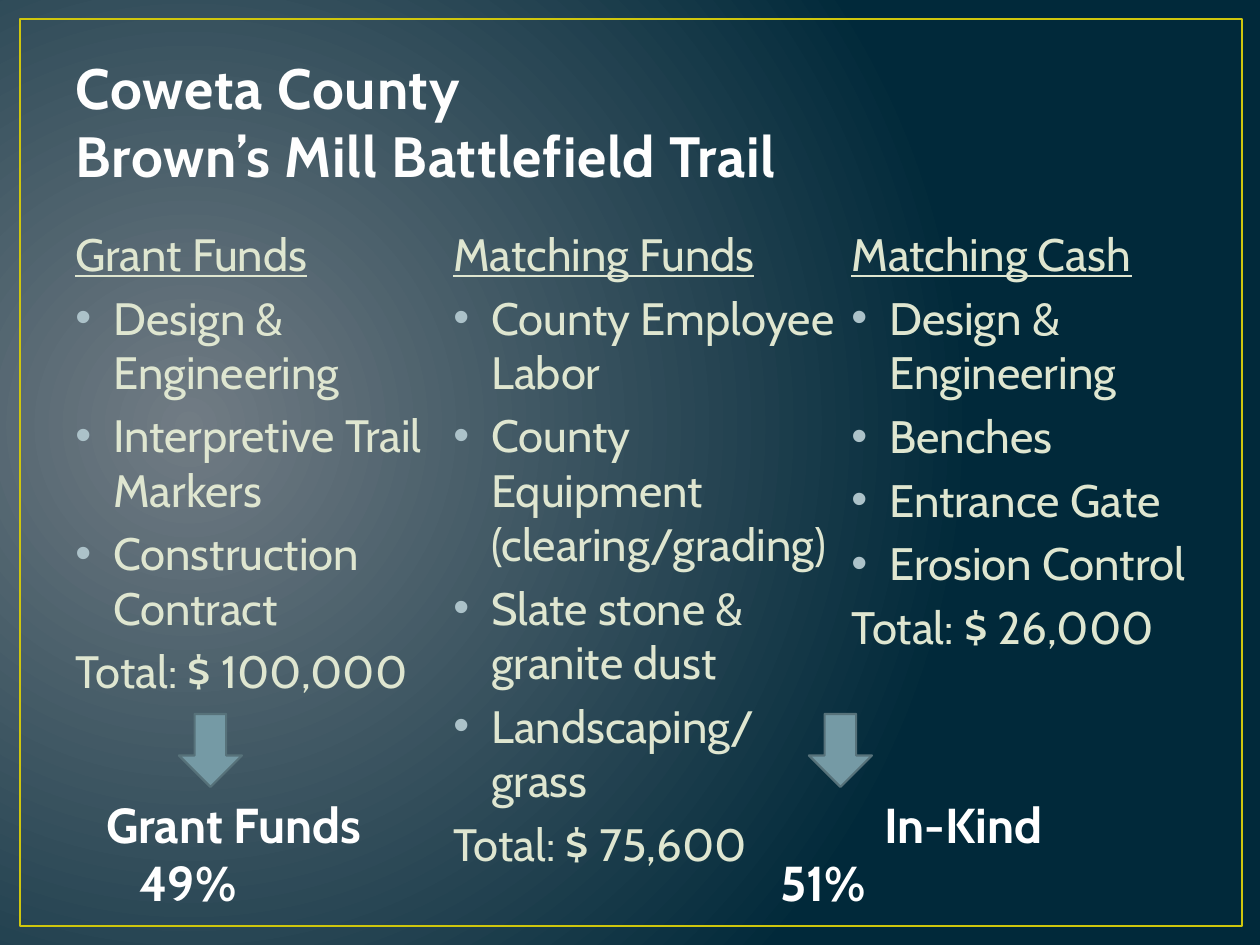
from copy import deepcopy

from pptx import Presentation, util as u
from pptx.dml.color import RGBColor
from pptx.enum import shapes, text
from pptx.oxml import parse_xml
from pptx.oxml.ns import nsdecls, qn

SCALE = 914400 / 126
FONT = "Cabin"
WHITE = RGBColor(0xFF, 0xFF, 0xFF)
TITLE = RGBColor(0xFE, 0xFE, 0xFE)
CREAM = RGBColor(0xDF, 0xE6, 0xD0)
GOLD = RGBColor(0xCF, 0xC6, 0x0D)
TEAL = RGBColor(0x75, 0x9A, 0xA5)
EDGE = RGBColor(0x57, 0x72, 0x7A)
GLOW = RGBColor(0x71, 0x7C, 0x84)
NAVY = RGBColor(0x01, 0x29, 0x3A)
DOT = RGBColor(0xAC, 0xC2, 0xC9)

TOP, INDENT = 220, 38
COLUMNS = [
    (63, 410, 25.9, "Grant Funds",
     ["Design & Engineering", "Interpretive Trail Markers",
      "Construction Contract"], "Total: $ 100,000"),
    (441, 410, 25.9, "Matching Funds",
     ["County Employee Labor", "County Equipment (clearing/grading)",
      "Slate stone & granite dust", "Landscaping/grass"], "Total: $ 75,600"),
    (839, 379, 26, "Matching Cash",
     ["Design & Engineering", "Benches", "Entrance Gate", "Erosion Control"],
     "Total: $ 26,000"),
]
# box left, box width, then each line with its first-line indent
SHARES = [
    (94, 340, [("Grant Funds", 0), ("49%", 33)]),
    (768, 387, [("In-Kind", 104), ("51%", 0)]),
]


def px(n):
    return u.Emu(round(n * SCALE))


def paint(slide):
    """Fill the background with a radial gradient."""
    stops = "".join(
        f'<a:gs pos="{pos}"><a:srgbClr val="{color}"/></a:gs>'
        for pos, color in ((0, GLOW), (100000, NAVY)))
    slide.background.fill.solid()
    prop = slide._element.cSld.bg.bgPr
    prop.replace(prop[0], parse_xml(
        f'<a:gradFill {nsdecls("a")} rotWithShape="1"><a:gsLst>{stops}</a:gsLst>'
        '<a:path path="circle"><a:fillToRect l="15000" t="50000" r="85000"'
        ' b="60000"/></a:path></a:gradFill>'))


def write(para, words, size, color, bold=False, line=False, track=0, gap=0):
    """Put formatted text into a paragraph; a vertical tab breaks the line."""
    para.text = words
    para.alignment = text.PP_ALIGN.LEFT
    para.space_before = u.Pt(gap)
    for run in para.runs:
        font = run.font
        font.name, font.size, font.bold = FONT, u.Pt(size), bold
        font.underline = line
        font.color.rgb = color
        if track:
            run._r.get_or_add_rPr().set("spc", str(track))
    for brk in para._p.findall(qn("a:br")):
        brk.insert(0, deepcopy(para.runs[0]._r.rPr))


def indent(para, left, first):
    prop = para._p.get_or_add_pPr()
    prop.set("marL", str(px(left)))
    prop.set("indent", str(px(first)))
    return prop


def bullet(para):
    prop = indent(para, INDENT, -INDENT)
    for xml in (f'<a:buClr {nsdecls("a")}><a:srgbClr val="{DOT}"/></a:buClr>',
                f'<a:buFont {nsdecls("a")} typeface="Arial"/>',
                f'<a:buChar {nsdecls("a")} char="•"/>'):
        prop.append(parse_xml(xml))


def lines(slide, x, y, w, h, count):
    """Add a text box and return its paragraphs."""
    frame = slide.shapes.add_textbox(px(x), px(y), px(w), px(h)).text_frame
    frame.word_wrap = True
    for _ in range(count - 1):
        frame.add_paragraph()
    return frame.paragraphs


def shape(slide, kind, x, y, w, h, edge, width, fill=None):
    item = slide.shapes.add_shape(kind, px(x), px(y), px(w), px(h))
    item.shadow.inherit = False
    if fill is None:
        item.fill.background()
    else:
        item.fill.solid()
        item.fill.fore_color.rgb = fill
    item.line.color.rgb = edge
    item.line.width = u.Pt(width)


def title(slide, words):
    item = slide.shapes.title
    item.left, item.top, item.width, item.height = map(px, (63, 38, 1134, 157))
    frame = item.text_frame
    frame.auto_size = text.MSO_AUTO_SIZE.NONE
    frame.vertical_anchor = text.MSO_ANCHOR.BOTTOM
    write(frame.paragraphs[0], words, 32.4, TITLE, bold=True, track=50)


def column(slide, x, w, size, head, items, total):
    paras = lines(slide, x, TOP, w, 624, len(items) + 2)
    for para, words in zip(paras, [head, *items, total]):
        write(para, words, size, CREAM, line=words == head, gap=5.2)
    for para in paras[1:-1]:
        bullet(para)


def share(slide, x, w, rows):
    paras = lines(slide, x, 788, w, 130, len(rows))
    for para, (words, first) in zip(paras, rows):
        write(para, words, 28, WHITE, bold=True)
        indent(para, 0, first)


def main():
    deck = Presentation()
    deck.slide_width, deck.slide_height = px(1260), px(945)
    slide = deck.slides.add_slide(deck.slide_layouts[5])
    paint(slide)
    kind = shapes.MSO_SHAPE
    shape(slide, kind.RECTANGLE, 20, 19, 1222, 907, GOLD, 1.5)
    title(slide, "Coweta County\vBrown’s Mill Battlefield Trail")
    for col in COLUMNS:
        column(slide, *col)
    for part in SHARES:
        share(slide, *part)
    for x in (809, 179):
        shape(slide, kind.DOWN_ARROW, x, 714, 63, 73, EDGE, 1.25, TEAL)
    deck.save("out.pptx")


if __name__ == "__main__":
    main()
